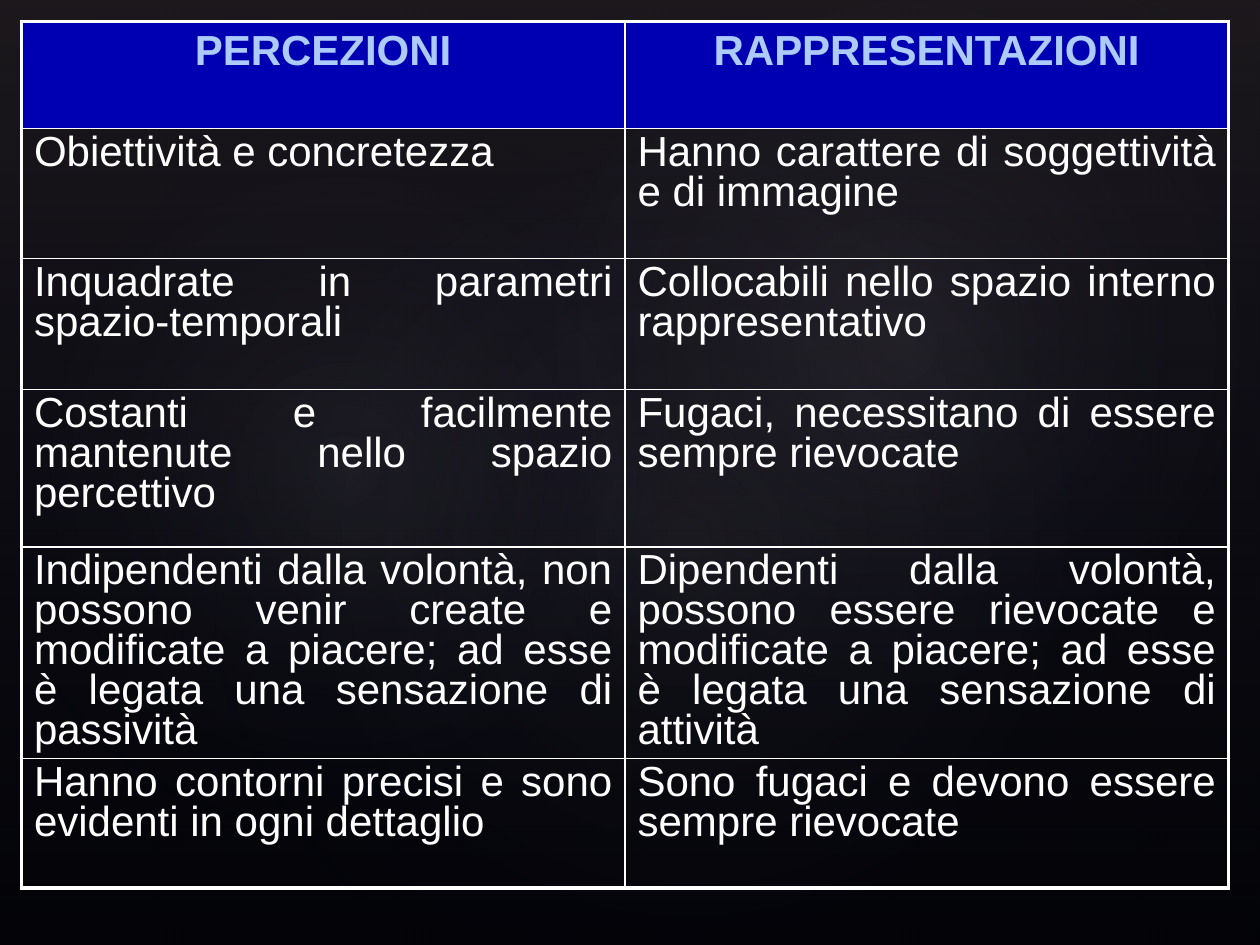
"""Build a slide with a two-column table comparing perceptions and representations."""
from lxml.etree import SubElement
from pptx import Presentation
from pptx.dml.color import RGBColor
from pptx.enum.shapes import MSO_SHAPE
from pptx.enum.text import PP_ALIGN
from pptx.oxml import parse_xml
from pptx.oxml.ns import nsdecls, qn
from pptx.util import Inches, Pt

HEADERS = ("PERCEZIONI", "RAPPRESENTAZIONI")
COMPARISONS = [
    ("Obiettività e concretezza",
     "Hanno carattere di soggettività e di immagine"),
    ("Inquadrate in parametri spazio-temporali",
     "Collocabili nello spazio interno rappresentativo"),
    ("Costanti e facilmente mantenute nello spazio percettivo",
     "Fugaci, necessitano di essere sempre rievocate"),
    ("Indipendenti dalla volontà, non possono venir create e modificate a piacere; "
     "ad esse è legata una sensazione di passività",
     "Dipendenti dalla volontà, possono essere rievocate e modificate a piacere; "
     "ad esse è legata una sensazione di attività"),
    ("Hanno contorni precisi e sono evidenti in ogni dettaglio",
     "Sono fugaci e devono essere sempre rievocate"),
]
ROW_HEIGHTS = (0.85, 1.03, 1.04, 1.25, 1.48, 1.03)
SLIDE_WIDTH, SLIDE_HEIGHT = 10, 7.5
MARGIN = 0.17
COLUMN_WIDTH = 4.79

THEME = {
    "font": "Arial", "size": 24, "spacing": 0.85,
    "background": "000000", "header_fill": "0000B2",
    "header_text": "ACCBF9", "text": "FFFFFF", "border": "FFFFFF",
    "inner_line": 1, "outer_line": 2.25,
    "veil": [(0, "504652", 36), (100, "242852", 10)],
    "glow_center": "C4BCC6", "glow_edge": "242852", "glow_reach": 58,
}
GLOWS = [
    ((1.5, 1.14, 7.92, 6.24), 328.7, 7),
    ((-0.3, 1.28, 6.06, 4.9), 294.3, 8),
    ((3.58, 0.13, 7.09, 5.2), 328.7, 8),
]
LINEAR = '<a:lin ang="5400000" scaled="0"/>'
RADIAL = '<a:path path="circle"><a:fillToRect l="50000" t="50000" r="50000" b="50000"/></a:path>'


def color(name):
    return RGBColor.from_string(THEME[name])


def add_gradient_shape(slide, kind, bounds, stops, direction, rotation=0):
    shape = slide.shapes.add_shape(kind, *map(Inches, bounds))
    shape.rotation = rotation
    shape.shadow.inherit = False
    shape.line.fill.background()
    stop_list = "".join(
        f'<a:gs pos="{position * 1000}"><a:srgbClr val="{shade}">'
        f'<a:alpha val="{alpha * 1000}"/></a:srgbClr></a:gs>'
        for position, shade, alpha in stops)
    gradient = parse_xml(
        f'<a:gradFill {nsdecls("a")} rotWithShape="1">'
        f'<a:gsLst>{stop_list}</a:gsLst>{direction}</a:gradFill>')
    shape.element.spPr.find(qn("a:prstGeom")).addnext(gradient)


def add_backdrop(slide):
    slide.background.fill.solid()
    slide.background.fill.fore_color.rgb = color("background")
    add_gradient_shape(slide, MSO_SHAPE.RECTANGLE,
                       (0, 0, SLIDE_WIDTH, SLIDE_HEIGHT), THEME["veil"], LINEAR)
    for bounds, rotation, alpha in GLOWS:
        stops = [(0, THEME["glow_center"], alpha),
                 (THEME["glow_reach"], THEME["glow_edge"], 0),
                 (100, THEME["glow_edge"], 0)]
        add_gradient_shape(slide, MSO_SHAPE.OVAL, bounds, stops, RADIAL, rotation)


def set_borders(cell, outer_sides):
    properties = cell._tc.get_or_add_tcPr()
    for index, side in enumerate("LRTB"):
        width = THEME["outer_line" if side in outer_sides else "inner_line"]
        line = SubElement(properties, qn(f"a:ln{side}"), w=str(Pt(width)))
        fill = SubElement(line, qn("a:solidFill"))
        SubElement(fill, qn("a:srgbClr"), val=THEME["border"])
        properties.insert(index, line)


def fill_cell(cell, text, is_header):
    if is_header:
        cell.fill.solid()
        cell.fill.fore_color.rgb = color("header_fill")
    else:
        cell.fill.background()
    para = cell.text_frame.paragraphs[0]
    para.alignment = PP_ALIGN.CENTER if is_header else PP_ALIGN.JUSTIFY
    para.line_spacing = 1.0 if is_header else THEME["spacing"]
    span = para.add_run()
    span.text = text
    span.font.name = THEME["font"]
    span.font.size = Pt(THEME["size"])
    span.font.bold = is_header
    span.font.color.rgb = color("header_text" if is_header else "text")


def add_comparison_table(slide):
    rows = [HEADERS, *COMPARISONS]
    table = slide.shapes.add_table(
        len(rows), len(HEADERS), Inches(MARGIN), Inches(MARGIN),
        Inches(COLUMN_WIDTH * len(HEADERS)), Inches(sum(ROW_HEIGHTS))).table
    table.first_row = table.horz_banding = False
    for column in table.columns:
        column.width = Inches(COLUMN_WIDTH)
    for row_index, (texts, height) in enumerate(zip(rows, ROW_HEIGHTS)):
        table.rows[row_index].height = Inches(height)
        for column_index, text in enumerate(texts):
            cell = table.cell(row_index, column_index)
            fill_cell(cell, text, row_index == 0)
            outer_sides = "LR"[column_index]
            if row_index == 0:
                outer_sides += "T"
            if row_index == len(rows) - 1:
                outer_sides += "B"
            set_borders(cell, outer_sides)


def main():
    deck = Presentation()
    deck.slide_width, deck.slide_height = Inches(SLIDE_WIDTH), Inches(SLIDE_HEIGHT)
    slide = deck.slides.add_slide(deck.slide_layouts[6])
    add_backdrop(slide)
    add_comparison_table(slide)
    deck.save("out.pptx")


if __name__ == "__main__":
    main()
